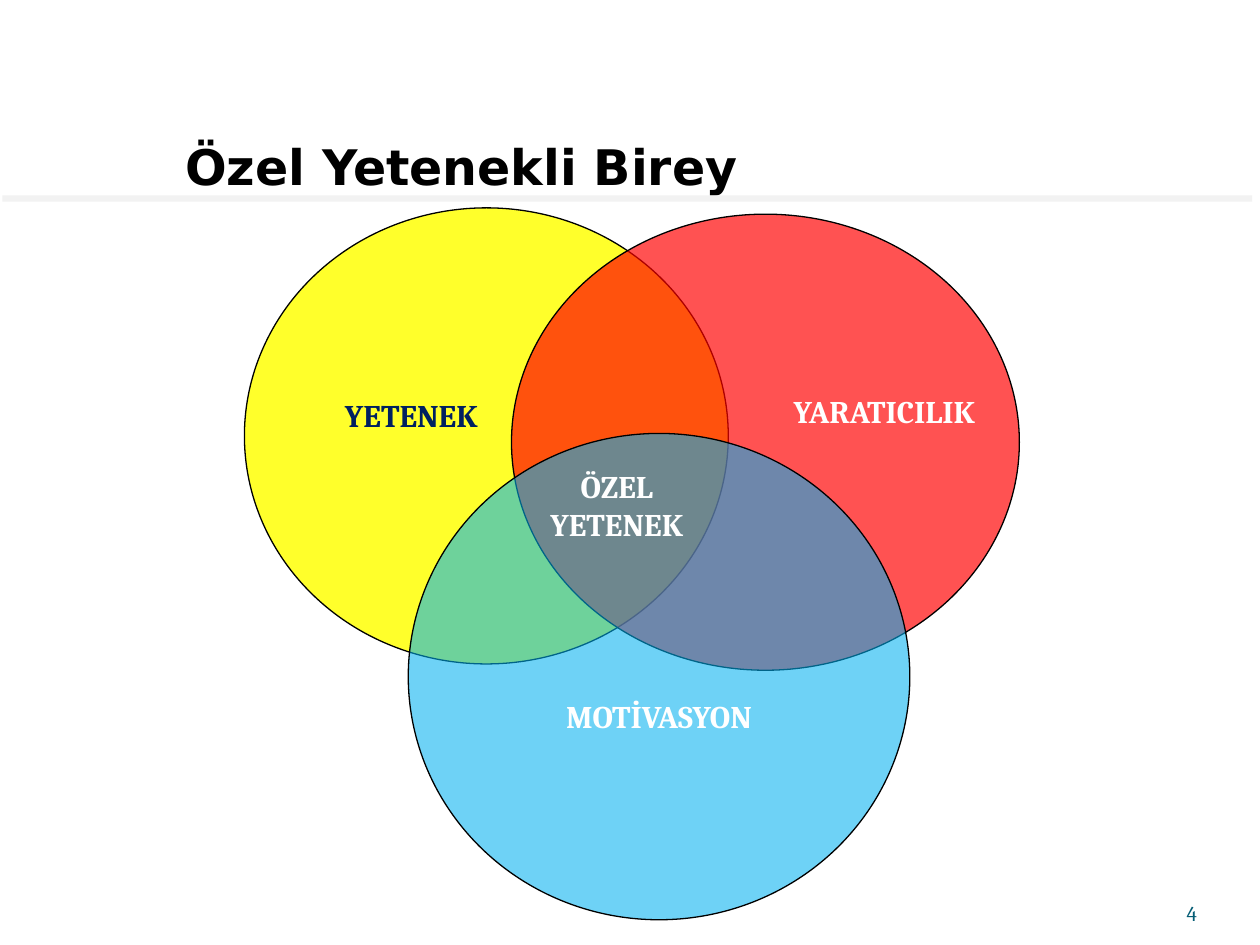
from lxml.etree import SubElement
from pptx import Presentation
from pptx.dml.color import RGBColor
from pptx.enum.shapes import MSO_SHAPE
from pptx.enum.text import MSO_ANCHOR, PP_ALIGN
from pptx.oxml.ns import qn
from pptx.util import Pt

SLIDE_SIZE = (720, 540)

CIRCLES = [
    ((139.7, 118.8, 276.5, 260.6), "FFFF00", 83),
    ((292.3, 122.4, 290.2, 260.6), "FF0000", 68),
    ((233.3, 247.7, 286.6, 277.9), "00B0F0", 57),
]
RULE = ((1.4, 111.6, 714.2, 3.6), "F2F2F2")

HEADING = {"size": Pt(28), "name": "DejaVu Sans", "bold": True}
LABEL = {"size": Pt(18), "name": "Cambria", "bold": True}
NUMBER = {"size": Pt(12), "name": "Cambria", "bold": False}

HEADING_FRAME = {"margin_left": 0, "margin_right": 0, "margin_top": Pt(3.6),
                 "margin_bottom": 0, "vertical_anchor": MSO_ANCHOR.BOTTOM,
                 "word_wrap": True}
NUMBER_FRAME = {**HEADING_FRAME, "margin_top": 0}
LABEL_FRAME = {"word_wrap": False}

TEXTS = [
    ("Özel Yetenekli Birey", (105.8, 21.6, 612, 90), "000000",
     HEADING, HEADING_FRAME, PP_ALIGN.LEFT),
    ("4", (624.2, 500.4, 59.8, 28.8), "045D75",
     NUMBER, NUMBER_FRAME, PP_ALIGN.RIGHT),
] + [
    (words, box, color, LABEL, LABEL_FRAME, PP_ALIGN.CENTER)
    for words, box, color in [
        ("YETENEK", (180, 222.5, 110.2, 28.8), "002060"),
        ("YARATICILIK", (432, 220.3, 146.9, 28.8), "FFFFFF"),
        ("MOTİVASYON", (301, 394.6, 151.2, 28.8), "FFFFFF"),
        ("ÖZEL\nYETENEK", (297.4, 263.5, 110.2, 51.1), "FFFFFF"),
    ]
]


def paint(color_format, hex_color):
    color_format.rgb = RGBColor.from_string(hex_color)


def apply(target, values):
    for key, value in values.items():
        setattr(target, key, value)


def add_filled(slide, kind, box, color):
    shape = slide.shapes.add_shape(kind, *map(Pt, box))
    shape.shadow.inherit = False
    shape.fill.solid()
    paint(shape.fill.fore_color, color)
    shape.line.fill.background()
    return shape


def add_circle(slide, box, color, opacity):
    circle = add_filled(slide, MSO_SHAPE.OVAL, box, color)
    fill_color = circle.fill._xPr.find(qn("a:solidFill"))[0]
    SubElement(fill_color, qn("a:alpha"), val=str(opacity * 1000))
    circle.line.width = Pt(0.75)
    circle.line.fill.solid()
    paint(circle.line.color, "000000")


def add_text(slide, words, box, color, font, frame_values, alignment):
    frame = slide.shapes.add_textbox(*map(Pt, box)).text_frame
    apply(frame, frame_values)
    frame.text = words
    for paragraph in frame.paragraphs:
        paragraph.alignment = alignment
        for run in paragraph.runs:
            apply(run.font, font)
            paint(run.font.color, color)


def main():
    deck = Presentation()
    deck.slide_width, deck.slide_height = map(Pt, SLIDE_SIZE)
    slide = deck.slides.add_slide(deck.slide_layouts[6])
    for circle in CIRCLES:
        add_circle(slide, *circle)
    for text in TEXTS:
        add_text(slide, *text)
    add_filled(slide, MSO_SHAPE.RECTANGLE, *RULE)
    deck.save("out.pptx")


if __name__ == "__main__":
    main()
